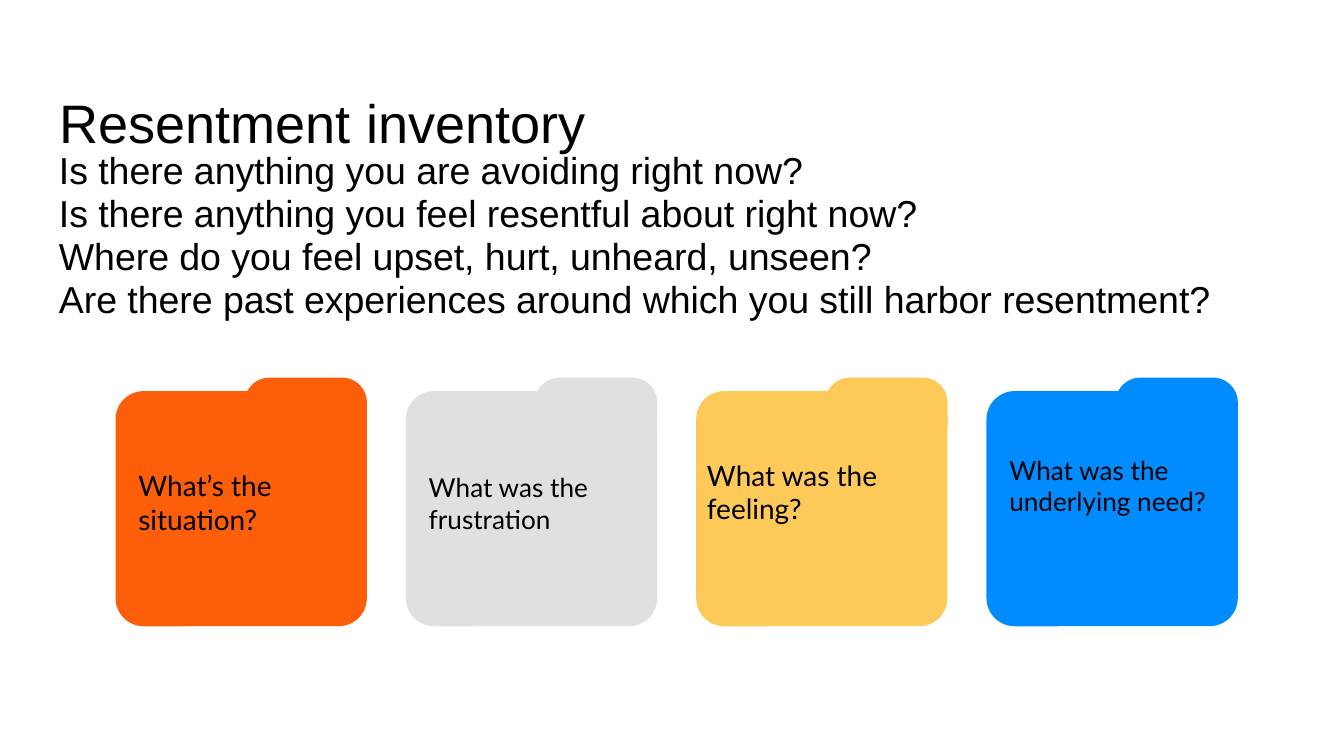
from dataclasses import dataclass

from pptx import Presentation
from pptx.dml.color import RGBColor
from pptx.enum.shapes import MSO_SHAPE as Shape
from pptx.enum.text import MSO_ANCHOR as Anchor, MSO_AUTO_SIZE as Fit, PP_ALIGN as Align
from pptx.util import Inches, Pt

BLACK = RGBColor(0x00, 0x00, 0x00)
ORANGE = RGBColor(0xFC, 0x5E, 0x09)
GREY = RGBColor(0xE0, 0xE0, 0xE0)
YELLOW = RGBColor(0xFD, 0xC9, 0x59)
BLUE = RGBColor(0x00, 0x8B, 0xFF)

# Folder grid, in inches
LEFT, STEP = 0.86, 2.16
WIDTH, HEIGHT, TOP = 1.87, 1.75, 2.91
TAB_WIDTH, TAB_HEIGHT, TAB_TOP = 0.91, 0.37, 2.81


@dataclass
class Folder:
    color: RGBColor
    text: str
    size: float
    top: float
    height: float
    inset: float = 0.17
    width: float = 1.53


FOLDERS = [
    Folder(ORANGE, "What’s the situation?", 15, 3.49, 0.83),
    Folder(GREY, "What was the frustration", 14, 3.51, 0.5),
    Folder(YELLOW, "What was the feeling?", 15, 3.41, 0.34, 0.08, 1.61),
    Folder(BLUE, "What was the underlying need?", 14, 3.38, 0.37),
]

QUESTIONS = [
    "Is there anything you are avoiding right now?",
    "Is there anything you feel resentful about right now?",
    "Where do you feel upset, hurt, unheard, unseen?",
    "Are there past experiences around which you still harbor resentment?",
]


def write(box, text: str, font: str, size: float, inset: float, spacing: float = 1.0) -> None:
    """Fill a box with one left-aligned paragraph; \\v breaks a line."""
    frame = box.text_frame
    pad = Inches(inset)
    style = {
        "word_wrap": True, "auto_size": Fit.NONE, "vertical_anchor": Anchor.TOP,
        "margin_left": pad, "margin_right": pad, "margin_top": pad, "margin_bottom": pad,
    }
    for name, value in style.items():
        setattr(frame, name, value)
    para = frame.paragraphs[0]
    para.text = text
    para.alignment = Align.LEFT
    para.line_spacing = spacing
    for run in para.runs:
        for name, value in {"name": font, "size": Pt(size), "bold": False}.items():
            setattr(run.font, name, value)
        run.font.color.rgb = BLACK


def block(slide, kind, place: tuple, color: RGBColor, rounding: float) -> None:
    """Draw a plain filled shape with rounded corners."""
    shape = slide.shapes.add_shape(kind, *map(Inches, place))
    shape.shadow.inherit = False
    shape.adjustments[0] = rounding
    shape.fill.solid()
    shape.fill.fore_color.rgb = color
    shape.line.fill.background()


def draw(slide, folder: Folder, left: float) -> None:
    """Draw a folder: tab, body and label."""
    tab_left = left + WIDTH - TAB_WIDTH
    block(slide, Shape.ROUND_2_SAME_RECTANGLE,
          (tab_left, TAB_TOP, TAB_WIDTH, TAB_HEIGHT), folder.color, 0.5)
    block(slide, Shape.ROUNDED_RECTANGLE, (left, TOP, WIDTH, HEIGHT), folder.color, 0.12)
    place = (left + folder.inset, folder.top, folder.width, folder.height)
    label = slide.shapes.add_textbox(*map(Inches, place))
    write(label, folder.text, "Lato", folder.size, 0)


def main() -> None:
    # Widescreen slide, 16:9
    deck = Presentation()
    deck.slide_width = Inches(10)
    deck.slide_height = deck.slide_width * 9 // 16
    slide = deck.slides.add_slide(deck.slide_layouts[5])

    # Title
    title = slide.shapes.title
    place = {"left": 0.34, "top": 0.49, "width": 9.32, "height": 0.63}
    for name, value in place.items():
        setattr(title, name, Inches(value))
    write(title, "Resentment inventory", "Arial", 29, 0.1, 1.15)

    # Questions
    body = slide.shapes.add_textbox(*map(Inches, (0.34, 1.02, 9.32, 1.71)))
    write(body, "\v".join(QUESTIONS), "Arial", 20.1, 0.1, 0.95)

    # Folders
    for index, folder in enumerate(FOLDERS):
        draw(slide, folder, LEFT + index * STEP)

    deck.save("out.pptx")


if __name__ == "__main__":
    main()
